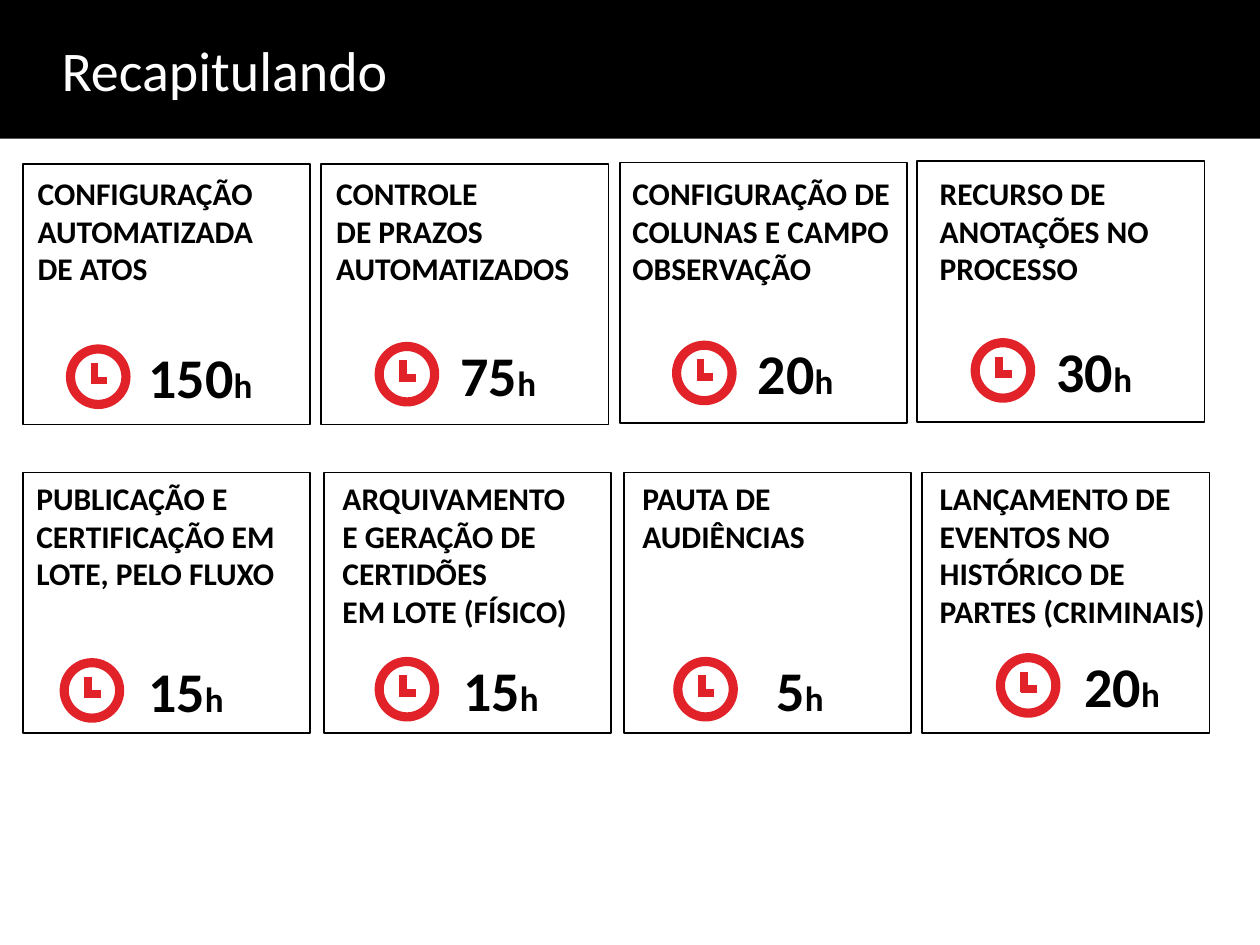
from lxml.etree import SubElement
from pptx import Presentation
from pptx.dml.color import RGBColor
from pptx.enum.shapes import MSO_CONNECTOR, MSO_SHAPE
from pptx.enum.text import MSO_ANCHOR, PP_ALIGN
from pptx.oxml.ns import qn
from pptx.util import Inches, Pt

COLORS = {"black": "000000", "white": "FFFFFF", "red": "E12229"}
FONT = "Calibri"
CARD_W, CARD_H = 2.28, 2.07
CLOCK = 0.44

# Card left and top; label left, top and width; clock left and top;
# hours left; label; hours. Inner places are relative to the card.
CARDS = [
    (0.18, 1.3, 0.02, 0.03, 2.29, 0.38, 1.47, 0.89,
     "CONFIGURAÇÃO AUTOMATIZADA\nDE ATOS", "150"),
    (2.55, 1.3, 0.02, 0.03, 2.44, 0.46, 1.45, 1.0,
     "CONTROLE\nDE PRAZOS AUTOMATIZADOS", "75"),
    (4.92, 1.29, 0, 0.04, 2.68, 0.45, 1.45, 0.99,
     "CONFIGURAÇÃO DE COLUNAS E CAMPO OBSERVAÇÃO", "20"),
    (7.28, 1.28, 0.08, 0.05, 2.73, 0.46, 1.44, 1.0,
     "RECURSO DE ANOTAÇÕES NO PROCESSO", "30"),
    (0.18, 3.75, 0.01, 0, 2.44, 0.33, 1.51, 0.89,
     "PUBLICAÇÃO E CERTIFICAÇÃO EM LOTE, PELO FLUXO", "15"),
    (2.57, 3.75, 0.05, 0, 2.44, 0.44, 1.5, 1.0,
     "ARQUIVAMENTO\nE GERAÇÃO DE CERTIDÕES\nEM LOTE (FÍSICO)", "15"),
    (4.95, 3.75, 0.05, 0, 2.44, 0.43, 1.5, 1.11,
     "PAUTA DE AUDIÊNCIAS", "5"),
    (7.32, 3.75, 0.04, 0, 2.44, 0.62, 1.47, 1.18,
     "LANÇAMENTO DE EVENTOS NO HISTÓRICO DE PARTES (CRIMINAIS)", "20"),
]


def write(para, text, size, color="black", bold=False):
    """Add text to a paragraph, with a line break at each newline."""
    for i, line in enumerate(text.split("\n")):
        if i:
            para.add_line_break()
        run = para.add_run()
        run.text = line
        font = run.font
        font.name, font.size, font.bold = FONT, Pt(size), bold
        font.color.rgb = RGBColor.from_string(COLORS[color])


def add_box(shapes, x, y, w, h, wrap=True):
    frame = shapes.add_textbox(
        Inches(x), Inches(y), Inches(w), Inches(h)).text_frame
    frame.word_wrap = wrap
    return frame.paragraphs[0]


def add_shape(shapes, kind, x, y, w, h, fill=None, line=None, width=1):
    shape = shapes.add_shape(kind, Inches(x), Inches(y), Inches(w), Inches(h))
    shape.shadow.inherit = False
    if fill:
        shape.fill.solid()
        shape.fill.fore_color.rgb = RGBColor.from_string(COLORS[fill])
    else:
        shape.fill.background()
    if line:
        shape.line.color.rgb = RGBColor.from_string(COLORS[line])
        shape.line.width = Pt(width)
    else:
        shape.line.fill.background()
    return shape


def add_header(slide, x, y, w, h):
    bar = add_shape(slide.shapes, MSO_SHAPE.RECTANGLE, x, y, w, h, fill="black")
    bar.text_frame.vertical_anchor = MSO_ANCHOR.MIDDLE
    para = bar.text_frame.paragraphs[0]
    para.alignment = PP_ALIGN.LEFT
    props = para._p.get_or_add_pPr()
    props.set("marL", str(Inches(0.39)))
    props.set("indent", "0")
    write(para, "Recapitulando", 32, color="white")


def add_clock(slide, x, y):
    shapes = slide.shapes.add_group_shape().shapes
    add_shape(shapes, MSO_SHAPE.OVAL, x, y, CLOCK, CLOCK, line="red", width=5.25)
    hands = [(0.19, 0.11, 0.19, 0.27), (0.29, 0.25, 0.16, 0.25)]
    for x1, y1, x2, y2 in hands:
        hand = shapes.add_connector(
            MSO_CONNECTOR.STRAIGHT, Inches(x + x1), Inches(y + y1),
            Inches(x + x2), Inches(y + y2))
        hand.line.color.rgb = RGBColor.from_string(COLORS["red"])
        hand.line.width = Pt(4.5)
        SubElement(hand._element.spPr, qn("a:effectLst"))


def add_hours(slide, x, y, hours):
    width = 0.58 + 0.23 * (len(hours) - 1)
    para = add_box(slide.shapes, x, y, width, 0.64, wrap=False)
    para.alignment = PP_ALIGN.CENTER
    write(para, hours, 32, bold=True)
    write(para, "h", 20, bold=True)


def add_card(slide, x, y, label_x, label_y, label_w, clock_x, clock_y,
             hours_x, label, hours):
    add_shape(slide.shapes, MSO_SHAPE.RECTANGLE, x, y, CARD_W, CARD_H,
              line="black")
    para = add_box(slide.shapes, x + label_x, y + label_y, label_w, 1.01)
    write(para, label, 18, bold=True)
    add_clock(slide, x + clock_x, y + clock_y)
    add_hours(slide, x + hours_x, y + clock_y - 0.1, hours)


def main():
    deck = Presentation()
    deck.slide_width, deck.slide_height = Inches(10), Inches(7.5)
    slide = deck.slides.add_slide(deck.slide_layouts[6])
    add_header(slide, 0, 0, 10, 1.1)
    for card in CARDS:
        add_card(slide, *card)
    deck.save("out.pptx")


if __name__ == "__main__":
    main()
